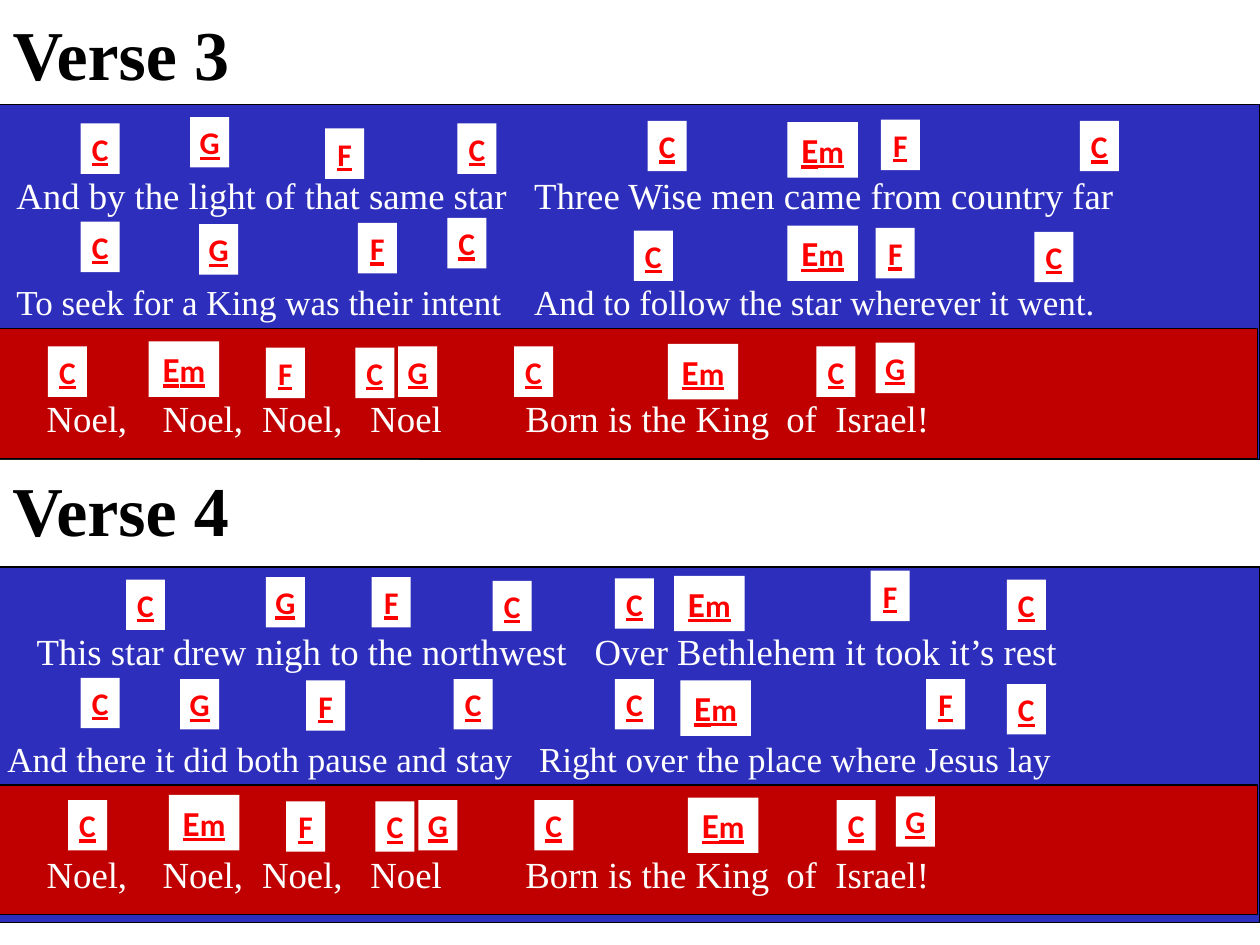
"""Build a song slide: two verses with their chorus and chord labels."""
import pptx
import pptx.dml.color
import pptx.enum.shapes
import pptx.enum.text
import pptx.util
from lxml import etree
from pptx.util import Inches

COLORS = {"verse": "2E2EBC", "chorus": "C00000", "lyric": "FFFFFF",
          "chord": "FF0000", "paper": "FFFFFF", "ink": "000000"}
SERIF = "Times New Roman"
VERSE_STEP = 3.62
CHORUS = [(0.37, "Noel,"), (1.29, "Noel,"), (2.08, "Noel,"), (2.94, "Noel"),
          (4.17, "Born is the King"), (6.24, "of"), (6.63, "Israel!")]
CHORUS_CHORDS = [("C", 0.38, 2.75), ("Em", 1.18, 2.71), ("F", 2.11, 2.76),
                 ("C", 2.82, 2.76), ("G", 3.16, 2.75), ("C", 4.08, 2.75),
                 ("Em", 5.3, 2.73), ("C", 6.48, 2.75), ("G", 6.95, 2.72)]
VERSES = [
    {"title": "Verse 3", "panel_top": 0.83, "chorus_shift": (0, 0),
     "first": [(0.13, "And by the light of that same star"),
               (4.24, "Three Wise men came from country far")],
     "second": [(0.13, "To seek for a King was their intent"),
                (4.24, "And to follow the star wherever it went.")],
     "chords": [("C", 0.64, 0.98), ("G", 1.51, 0.93), ("F", 2.58, 1.02),
                ("C", 3.63, 0.98), ("C", 5.14, 0.96), ("Em", 6.25, 0.97),
                ("F", 6.99, 0.95), ("C", 8.57, 0.96),
                ("C", 0.64, 1.76), ("G", 1.58, 1.78), ("F", 2.84, 1.77),
                ("C", 3.55, 1.73), ("C", 5.03, 1.83), ("Em", 6.25, 1.79),
                ("F", 6.95, 1.81), ("C", 8.21, 1.84)]},
    {"title": "Verse 4", "panel_top": 4.5, "chorus_shift": (0.16, 3.6),
     "first": [(0.29, "This star drew nigh to the northwest"),
               (4.72, "Over Bethlehem it took it’s rest")],
     "second": [(0.06, "And there it did both pause and stay"),
                (4.28, "Right over the place where Jesus lay")],
     "chords": [("C", 1, 4.6), ("G", 2.11, 4.58), ("F", 2.95, 4.58),
                ("C", 3.91, 4.61), ("C", 4.88, 4.59), ("Em", 5.35, 4.57),
                ("F", 6.91, 4.53), ("C", 7.99, 4.6),
                ("C", 0.64, 5.38), ("G", 1.43, 5.39), ("F", 2.43, 5.4),
                ("C", 3.6, 5.39), ("C", 4.88, 5.39), ("Em", 5.4, 5.4),
                ("F", 7.35, 5.39), ("C", 7.99, 5.43)]},
]


def rgb(name):
    """Return the named colour."""
    return pptx.dml.color.RGBColor.from_string(COLORS[name])


def add_span(para, text, size, font, color, bold=False, underline=None):
    """Add one formatted run to a paragraph."""
    span = para.add_run()
    span.text = text
    span.font.size = pptx.util.Pt(size)
    span.font.name = font
    span.font.color.rgb = rgb(color)
    span.font.bold = bold
    span.font.underline = underline


def prepare_text(box, align, wrap):
    """Set the text layout of a box and return its first paragraph."""
    frame = box.text_frame
    frame.word_wrap = wrap
    frame.auto_size = pptx.enum.text.MSO_AUTO_SIZE.NONE
    frame.vertical_anchor = pptx.enum.text.MSO_ANCHOR.TOP
    para = frame.paragraphs[0]
    para.alignment = align
    return para


def add_panel(page, left, top, width, height, fill, outlined=True):
    """Add a filled rectangle, with a thin border if outlined."""
    box = page.shapes.add_shape(
        pptx.enum.shapes.MSO_SHAPE.RECTANGLE,
        Inches(left), Inches(top), Inches(width), Inches(height))
    box.shadow.inherit = False
    box.fill.solid()
    box.fill.fore_color.rgb = rgb(fill)
    if outlined:
        box.line.color.rgb = rgb("ink")
        box.line.width = pptx.util.Pt(0.75)
    else:
        box.line.fill.background()
    return box


def add_lyric(page, left, top, size, phrases):
    """Add one lyric line whose phrases start at the given positions."""
    box = page.shapes.add_textbox(
        Inches(left), Inches(top), Inches(10.02), Inches(0.45))
    para = prepare_text(box, pptx.enum.text.PP_ALIGN.LEFT, True)
    start = phrases[0][0]
    box.text_frame.margin_left = Inches(start - left)
    properties = para._p.get_or_add_pPr()
    stops = etree.SubElement(properties, pptx.oxml.ns.qn("a:tabLst"))
    for place, _ in phrases[1:]:
        etree.SubElement(stops, pptx.oxml.ns.qn("a:tab"),
                         pos=str(Inches(place - start)), algn="l")
    text = "\t".join(phrase for _, phrase in phrases)
    add_span(para, text, size, SERIF, "lyric")


def add_chord(page, name, left, top):
    """Add a white label with an underlined chord name."""
    minor = name == "Em"
    width, height = (0.56, 0.44) if minor else (0.31, 0.4)
    box = add_panel(page, left, top, width, height, "paper", False)
    para = prepare_text(box, pptx.enum.text.PP_ALIGN.CENTER, False)
    for letter in name:
        size = 20 if letter == "E" else 18
        add_span(para, letter, size, "Calibri", "chord", True, True)


def write_heading(box, text):
    """Write a verse heading into a box."""
    para = prepare_text(box, pptx.enum.text.PP_ALIGN.LEFT, True)
    add_span(para, text, 40, SERIF, "ink", True)


def add_verse(page, verse, offset):
    """Add the panels, lyrics and chords of one verse."""
    add_panel(page, -0.02, verse["panel_top"], 10.02, 2.82, "verse")
    add_lyric(page, -0.02, 1.32 + offset, 21, verse["first"])
    add_lyric(page, -0.04, 2.18 + offset, 20, verse["second"])
    add_panel(page, -0.04, 2.61 + offset, 10.02, 1.03, "chorus")
    add_lyric(page, 0.05, 3.09 + offset, 21, CHORUS)
    right, down = verse["chorus_shift"]
    chorus_chords = [(name, left + right, top + down)
                     for name, left, top in CHORUS_CHORDS]
    for chord in verse["chords"] + chorus_chords:
        add_chord(page, *chord)


def main():
    """Build and save the deck."""
    deck = pptx.Presentation()
    deck.slide_width, deck.slide_height = Inches(10), Inches(7.5)
    page = deck.slides.add_slide(deck.slide_layouts[5])
    title = page.shapes.title
    title.left, title.top = Inches(0), Inches(0.03)
    title.width, title.height = Inches(3.33), Inches(0.77)
    write_heading(title, VERSES[0]["title"])
    add_verse(page, VERSES[0], 0)
    heading = add_panel(page, 0, 0.03 + VERSE_STEP, 3.33, 0.77, "paper", False)
    write_heading(heading, VERSES[1]["title"])
    add_verse(page, VERSES[1], VERSE_STEP)
    deck.save("out.pptx")


if __name__ == "__main__":
    main()
